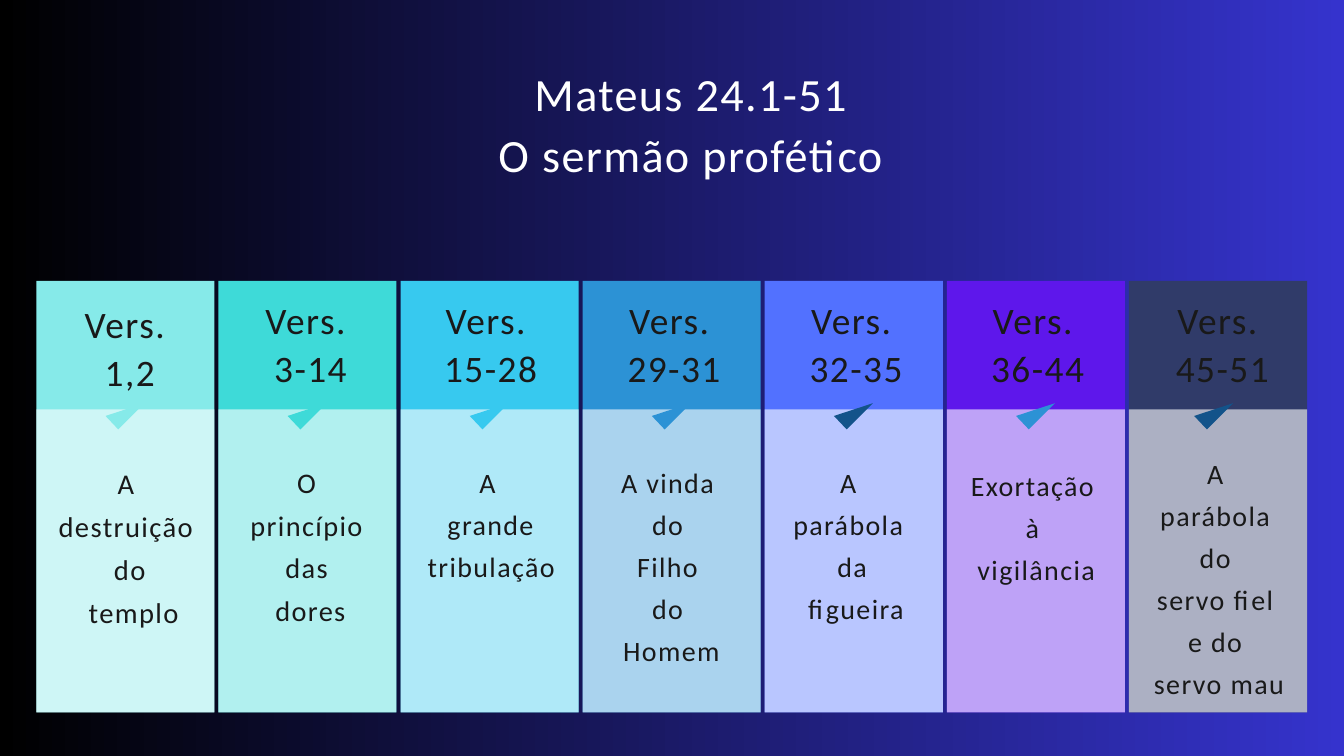
from typing import NamedTuple

from lxml import etree
from pptx import Presentation
from pptx.dml.color import RGBColor
from pptx.enum.shapes import MSO_SHAPE as Shape
from pptx.enum.text import PP_ALIGN as Align
from pptx.oxml.ns import qn
from pptx.util import Inches, Pt

FONT = "Calibri"
DARK, WHITE = "191919", "FFFFFF"
COLUMN_LEFT, COLUMN_STEP, COLUMN_WIDTH = 0.54, 2.71, 2.65
COLUMN_TOP, PANEL_TOP, COLUMN_BOTTOM = 4.18, 6.09, 10.6
TEXT_WIDTH = 2.52


class Column(NamedTuple):
    verses: str
    lines: list
    fill: str
    pointer_fill: str
    verses_left: float
    lines_left: float
    verses_top: float = 4.37
    lines_top: float = 6.8
    size: float = 30
    pointer_offset: float = 1.03


COLUMNS = [
    Column("1,2", ["A ", "destruição ", "do", " templo"],
           "86EAE9", "86EAE9", 0.67, 0.67, verses_top=4.43, lines_top=6.81, size=30.6),
    Column("3-14", ["O ", "princípio ", "das ", "dores"],
           "3EDAD8", "3EDAD8", 3.36, 3.36, size=30.4),
    Column("15-28", ["A ", "grande tribulação"],
           "37C9EF", "37C9EF", 6.04, 6.05),
    Column("29-31", ["A vinda ", "do ", "Filho ", "do ", "Homem"],
           "2C92D5", "2C92D5", 8.77, 8.73),
    Column("32-35", ["A ", "parábola ", "da", " figueira"],
           "5271FF", "13538A", 11.48, 11.42),
    Column("36-44", ["Exortação ", "à ", "vigilância"],
           "5E17EB", "2C92D5", 14.18, 14.16, lines_top=6.84),
    Column("45-51", ["A ", "parábola ", "do ", "servo fiel ", "e do ", "servo mau"],
           "303B69", "13538A", 16.93, 16.88, lines_top=6.67, pointer_offset=0.97),
]


def rgb(value):
    return RGBColor.from_string(value)


def paint(shape, color, opacity=100):
    """Give a shape a plain fill, with no line and no shadow."""
    shape.shadow.inherit = False
    shape.line.fill.background()
    shape.fill.solid()
    shape.fill.fore_color.rgb = rgb(color)
    if opacity < 100:
        color_element = shape._element.spPr.find(qn("a:solidFill"))[0]
        etree.SubElement(color_element, qn("a:alpha"), val=str(opacity * 1000))


def add_background(slide, start, end):
    fill = slide.background.fill
    fill.gradient()
    fill.gradient_angle = 0
    for stop, position, color in zip(fill.gradient_stops, (0, 1), (start, end)):
        stop.position = position
        stop.color.rgb = rgb(color)


def add_block(slide, left, top, color, opacity=100):
    """Add a column-wide rectangle that reaches down to the column's foot."""
    block = slide.shapes.add_shape(
        Shape.RECTANGLE, Inches(left), Inches(top),
        Inches(COLUMN_WIDTH), Inches(COLUMN_BOTTOM - top))
    paint(block, color, opacity)


def add_pointer(slide, left, color):
    builder = slide.shapes.build_freeform(
        Inches(left + 0.58), Inches(6), scale=1.0)
    builder.add_line_segments([
        (Inches(left + 0.19), Inches(6.39)),
        (Inches(left), Inches(6.19))], close=True)
    paint(builder.convert_to_shape(), color)


def add_text(slide, left, top, width, lines, size, line_height, spacing=1.5, color=DARK):
    """Add centred lines; line height and letter spacing are in points."""
    box = slide.shapes.add_textbox(
        Inches(left), Inches(top), Inches(width),
        Inches(len(lines) * line_height / 72))
    frame = box.text_frame
    frame.word_wrap = True
    frame.margin_left = frame.margin_right = 0
    frame.margin_top = frame.margin_bottom = 0
    frame.text = "\n".join(lines)
    for paragraph in frame.paragraphs:
        paragraph.alignment = Align.CENTER
        paragraph.line_spacing = Pt(line_height)
        font = paragraph.font
        font.name = FONT
        font.size = Pt(size)
        font.color.rgb = rgb(color)
        font._element.set("spc", str(round(spacing * 100)))


def add_column(slide, left, column):
    add_block(slide, left, COLUMN_TOP, column.fill)
    add_block(slide, left, PANEL_TOP, WHITE, opacity=60)
    add_pointer(slide, left + column.pointer_offset, column.pointer_fill)
    add_text(slide, column.verses_left, column.verses_top, TEXT_WIDTH,
             ["Vers. ", column.verses], 40, 51.6, spacing=1.6)
    add_text(slide, column.lines_left, column.lines_top, TEXT_WIDTH,
             column.lines, column.size, column.size * 1.5)


def main():
    presentation = Presentation()
    presentation.slide_width = Inches(20)
    presentation.slide_height = Inches(11.25)
    slide = presentation.slides.add_slide(presentation.slide_layouts[6])
    add_background(slide, "000000", "3533CD")
    add_text(slide, 3.94, 0.9, 12.68, ["Mateus 24.1-51", "O sermão profético"],
             49.5, 64.9, color=WHITE)
    for index, column in enumerate(COLUMNS):
        add_column(slide, COLUMN_LEFT + index * COLUMN_STEP, column)
    presentation.save("out.pptx")


if __name__ == "__main__":
    main()
